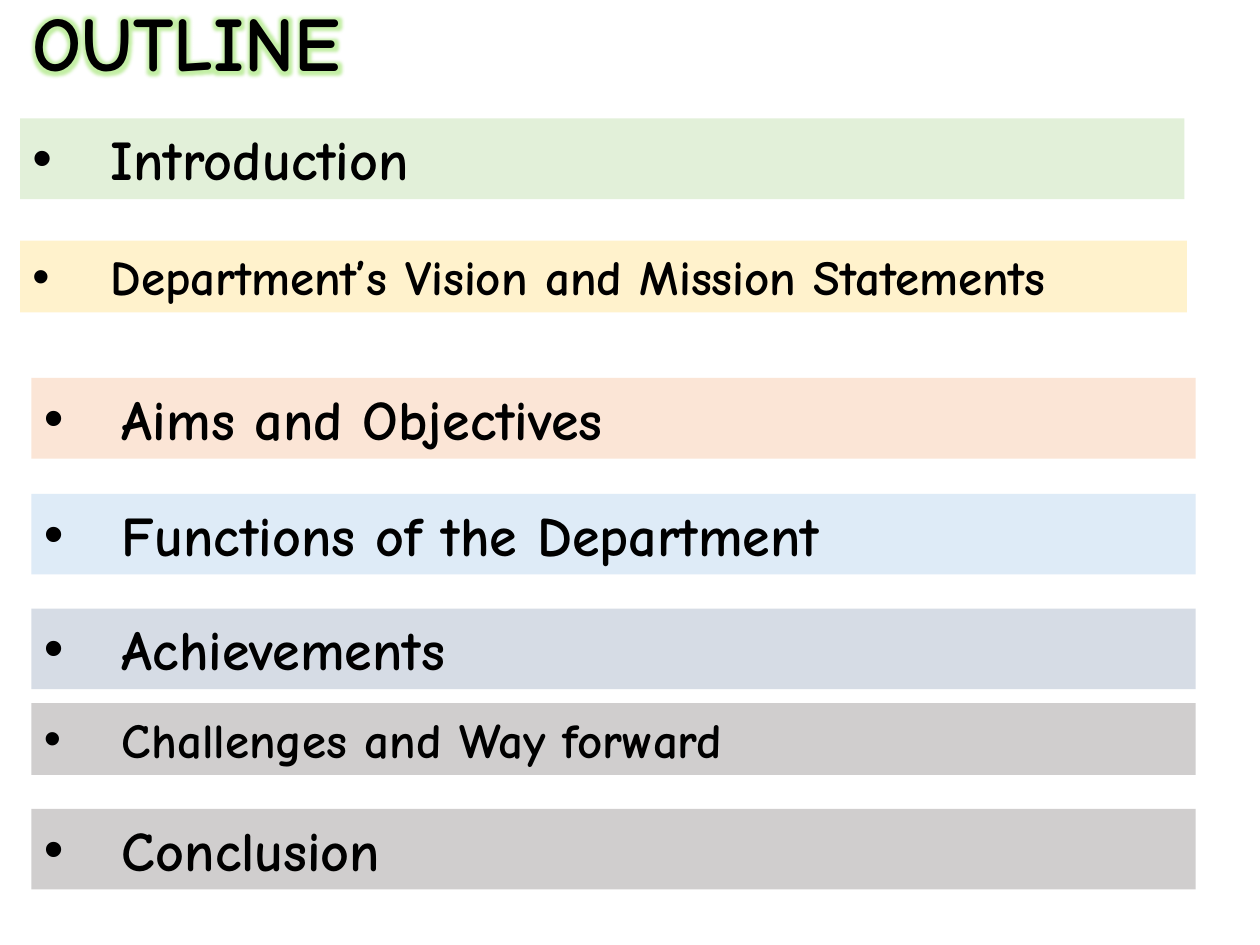
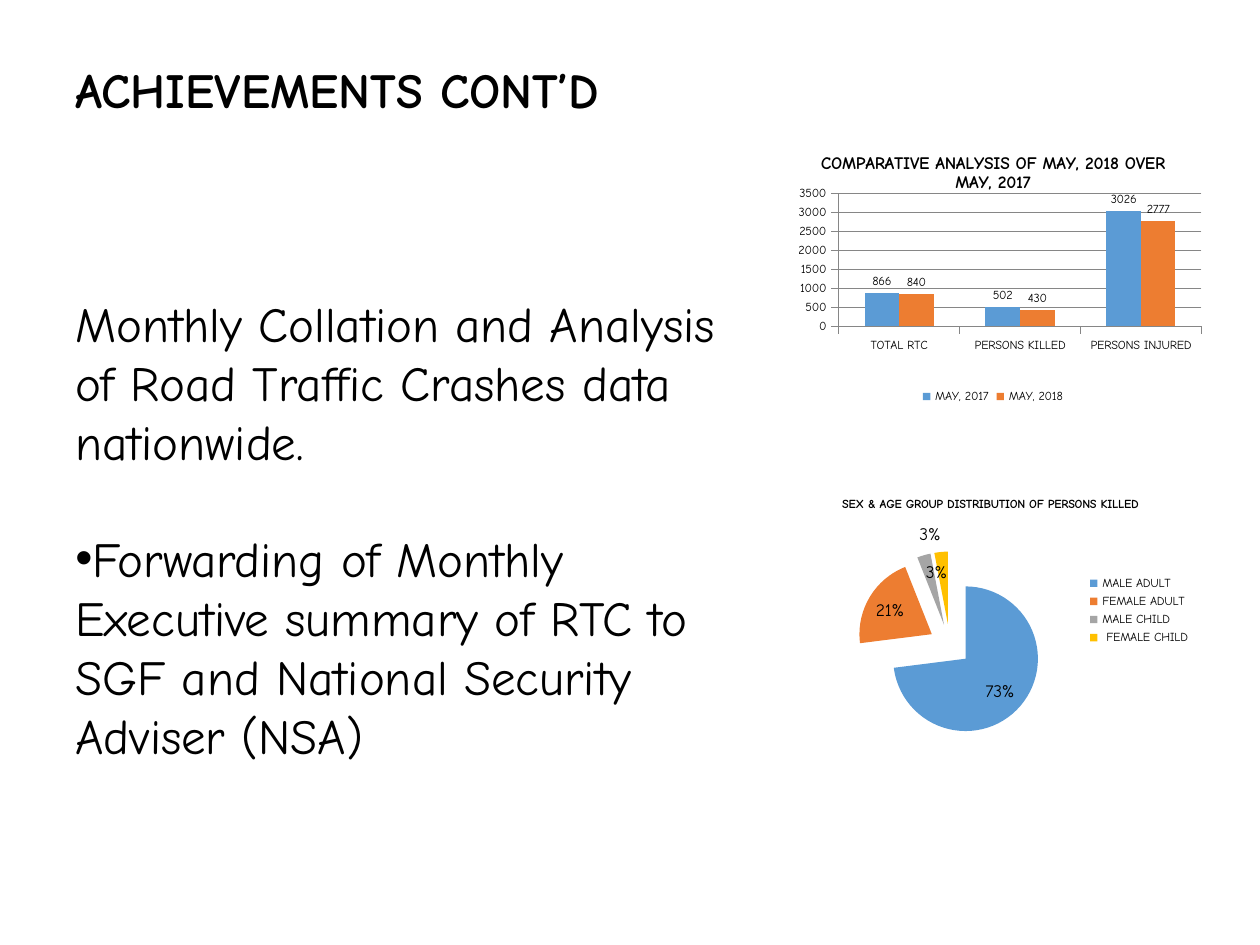
from lxml.etree import Element, SubElement
from pptx import Presentation
from pptx.chart.data import CategoryChartData
from pptx.dml.color import RGBColor
from pptx.enum.chart import XL_CHART_TYPE, XL_LABEL_POSITION, XL_LEGEND_POSITION
from pptx.enum.shapes import MSO_SHAPE
from pptx.enum.text import MSO_ANCHOR, PP_ALIGN
from pptx.oxml.ns import qn
from pptx.util import Inches, Pt

FACE = "Comic Neue"
BLACK = RGBColor(0x00, 0x00, 0x00)
RULE = RGBColor(0x86, 0x86, 0x86)
BLUE = RGBColor(0x5B, 0x9B, 0xD5)
ORANGE = RGBColor(0xED, 0x7D, 0x31)
GREY = RGBColor(0xA5, 0xA5, 0xA5)
GOLD = RGBColor(0xFF, 0xC0, 0x00)
GREEN = RGBColor(0x6B, 0xD6, 0x1F)
MINT = RGBColor(0xE2, 0xF0, 0xD9)
CREAM = RGBColor(0xFF, 0xF2, 0xCC)
PEACH = RGBColor(0xFB, 0xE5, 0xD6)
SKY = RGBColor(0xDE, 0xEB, 0xF7)
SLATE = RGBColor(0xD6, 0xDC, 0xE5)
SILVER = RGBColor(0xD0, 0xCE, 0xCE)

FRAME = {"word_wrap": True, "vertical_anchor": MSO_ANCHOR.TOP}
TALL = {"size": 32, "height": 0.64}
SHORT = {"size": 28, "height": 0.57}
TOPICS = [
    ("Introduction", 0.16, 0.94, 9.24, MINT, TALL),
    ("Department’s Vision and Mission Statements", 0.16, 1.91, 9.26, CREAM, SHORT),
    ("Aims and Objectives", 0.25, 3, 9.24, PEACH, TALL),
    ("Functions of the Department", 0.25, 3.92, 9.24, SKY, TALL),
    ("Achievements", 0.25, 4.83, 9.24, SLATE, TALL),
    ("Challenges and Way forward", 0.25, 5.58, 9.24, SILVER, SHORT),
    ("Conclusion", 0.25, 6.42, 9.24, SILVER, TALL),
]


def put(item, values):
    """Set each named value on an item."""
    for name, value in values.items():
        setattr(item, name, value)


def style(font, size, bold=False):
    """Give a font the shared face and colour."""
    put(font, {"name": FACE, "size": Pt(size), "bold": bold})
    font.color.rgb = BLACK


def write(para, text, size, bold=False):
    """Fill a left-aligned paragraph with one run."""
    para.alignment = PP_ALIGN.LEFT
    run = para.add_run()
    run.text = text
    style(run.font, size, bold)


def bullet(para, indent=0):
    """Give a paragraph a round bullet with a hanging indent."""
    props = para._p.get_or_add_pPr()
    props.set("marL", str(Inches(indent)))
    props.set("indent", str(-Inches(indent)))
    SubElement(props, qn("a:buFont"), typeface="Arial")
    SubElement(props, qn("a:buChar"), char="•")


def head(slide, text, size, box):
    """Place and format the title."""
    title = slide.shapes.title
    put(title, dict(zip(("left", "top", "width", "height"), map(Inches, box))))
    put(title.text_frame, FRAME)
    write(title.text_frame.paragraphs[0], text, size, True)
    return title


def glow(shape, color):
    """Put a soft glow behind the text of a shape."""
    for latin in shape.element.iter(qn("a:latin")):
        effect = Element(qn("a:effectLst"))
        halo = SubElement(effect, qn("a:glow"), rad=str(Inches(0.11)))
        tint = SubElement(halo, qn("a:srgbClr"), val=str(color))
        SubElement(tint, qn("a:alpha"), val="40000")
        latin.addprevious(effect)


def band(slide, text, left, top, width, fill, kind):
    """Draw one coloured topic band."""
    box = map(Inches, (left, top, width, kind["height"]))
    shape = slide.shapes.add_shape(MSO_SHAPE.RECTANGLE, *box)
    shape.shadow.inherit = False
    shape.fill.solid()
    shape.fill.fore_color.rgb = fill
    shape.line.fill.background()
    put(shape.text_frame, FRAME)
    para = shape.text_frame.paragraphs[0]
    write(para, text, kind["size"], True)
    bullet(para, 0.62)


def notes(slide, box):
    """Write the two achievements."""
    frame = slide.shapes.add_textbox(*map(Inches, box)).text_frame
    put(frame, FRAME)
    first, second = frame.paragraphs[0], frame.add_paragraph()
    write(first, "Monthly Collation and Analysis of Road Traffic Crashes data nationwide.", 28)
    first.space_after = Pt(33.5)
    write(second, "Forwarding of Monthly Executive summary of RTC to SGF "
          "and National Security Adviser (NSA)", 28)
    bullet(second)


def inner(chart, box):
    """Fix the inner plot area as shares of the chart."""
    area = chart.element.find(".//" + qn("c:plotArea"))
    layout = area.find(qn("c:layout"))
    if layout is None:
        layout = Element(qn("c:layout"))
        area.insert(0, layout)
    manual = SubElement(layout, qn("c:manualLayout"))
    names = ("layoutTarget", "xMode", "yMode", "x", "y", "w", "h")
    for name, value in zip(names, ("inner", "edge", "edge", *box)):
        SubElement(manual, qn("c:" + name), val=str(value))


def graph(slide, kind, box, title, size, cats, series, plot):
    """Add a chart with its title, legend font and plot area."""
    data = CategoryChartData()
    data.categories = cats
    for name, values in series:
        data.add_series(name, values)
    chart = slide.shapes.add_chart(kind, *map(Inches, box), data).chart
    style(chart.font, 10)
    chart.has_title = True
    write(chart.chart_title.text_frame.paragraphs[0], title, size, True)
    chart.chart_title.text_frame.paragraphs[0].alignment = PP_ALIGN.CENTER
    chart.chart_title.include_in_layout = False
    chart.has_legend = True
    style(chart.legend.font, 7)
    inner(chart, plot)
    return chart


def bars(slide, box):
    """Compare the two months in clustered columns."""
    chart = graph(
        slide, XL_CHART_TYPE.COLUMN_CLUSTERED, box,
        "COMPARATIVE ANALYSIS OF MAY, 2018 OVER MAY, 2017", 10,
        ("TOTAL RTC", "PERSONS KILLED", "PERSONS INJURED"),
        (("MAY, 2017", (866, 502, 3026)), ("MAY, 2018", (840, 430, 2777))),
        (0.16, 0.21, 0.8, 0.49))
    put(chart.legend, {"position": XL_LEGEND_POSITION.BOTTOM, "include_in_layout": False})
    for axis in (chart.category_axis, chart.value_axis):
        style(axis.tick_labels.font, 7)
        axis.format.line.color.rgb = RULE
    put(chart.value_axis, {"minimum_scale": 0, "maximum_scale": 3500, "major_unit": 500})
    chart.value_axis.major_gridlines.format.line.color.rgb = RULE
    plot = chart.plots[0]
    put(plot, {"gap_width": 150, "overlap": 0, "vary_by_categories": False})
    for series, color in zip(plot.series, (BLUE, ORANGE)):
        series.format.fill.solid()
        series.format.fill.fore_color.rgb = color
        labels = series.data_labels
        put(labels, {"show_value": True, "position": XL_LABEL_POSITION.OUTSIDE_END})
        style(labels.font, 7)


def pie(slide, box):
    """Split the persons killed by sex and age."""
    chart = graph(
        slide, XL_CHART_TYPE.PIE, box,
        "SEX & AGE GROUP DISTRIBUTION OF PERSONS KILLED", 7,
        ("MALE ADULT", "FEMALE ADULT", "MALE CHILD", " FEMALE CHILD"),
        (("Series 1", (73, 21, 3, 3)),), (0, 0.27, 0.81, 0.73))
    put(chart.legend, {"position": XL_LEGEND_POSITION.RIGHT, "include_in_layout": True})
    plot = chart.plots[0]
    plot.vary_by_categories = True
    series = plot.series[0]
    name = chart.element.find(".//" + qn("c:ser")).find(qn("c:tx"))
    name.addnext(Element(qn("c:explosion"), val="29"))
    for spot, color in enumerate((BLUE, ORANGE, GREY, GOLD)):
        fill = series.points[spot].format.fill
        fill.solid()
        fill.fore_color.rgb = color
    labels = series.data_labels
    put(labels, {"show_percentage": True, "show_value": False,
                 "position": XL_LABEL_POSITION.INSIDE_END})
    style(labels.font, 10)
    last = series.points[3].data_label
    style(last.font, 10)
    last.position = XL_LABEL_POSITION.OUTSIDE_END
    for label in chart.element.iter(qn("c:dLbl")):
        label.find(qn("c:showVal")).set("val", "0")
        label.find(qn("c:showPercent")).set("val", "1")


def outline(slide):
    """Build the outline slide."""
    glow(head(slide, "OUTLINE", 44, (0.16, -0.09, 7.94, 0.84)), GREEN)
    for topic in TOPICS:
        band(slide, *topic)


def results(slide):
    """Build the achievements slide."""
    head(slide, "ACHIEVEMENTS CONT’D", 28, (0.5, 0.42, 5.67, 0.57))
    notes(slide, (0.5, 2.28, 5.67, 4.84))
    pie(slide, (6.17, 3.83, 3.38, 2.03))
    bars(slide, (6.08, 1.08, 3.6, 2.16))


def main():
    """Build and save the deck."""
    deck = Presentation()
    put(deck, {"slide_width": Inches(10), "slide_height": Inches(7.5)})
    for build in (outline, results):
        build(deck.slides.add_slide(deck.slide_layouts[5]))
    deck.save("out.pptx")


if __name__ == "__main__":
    main()
